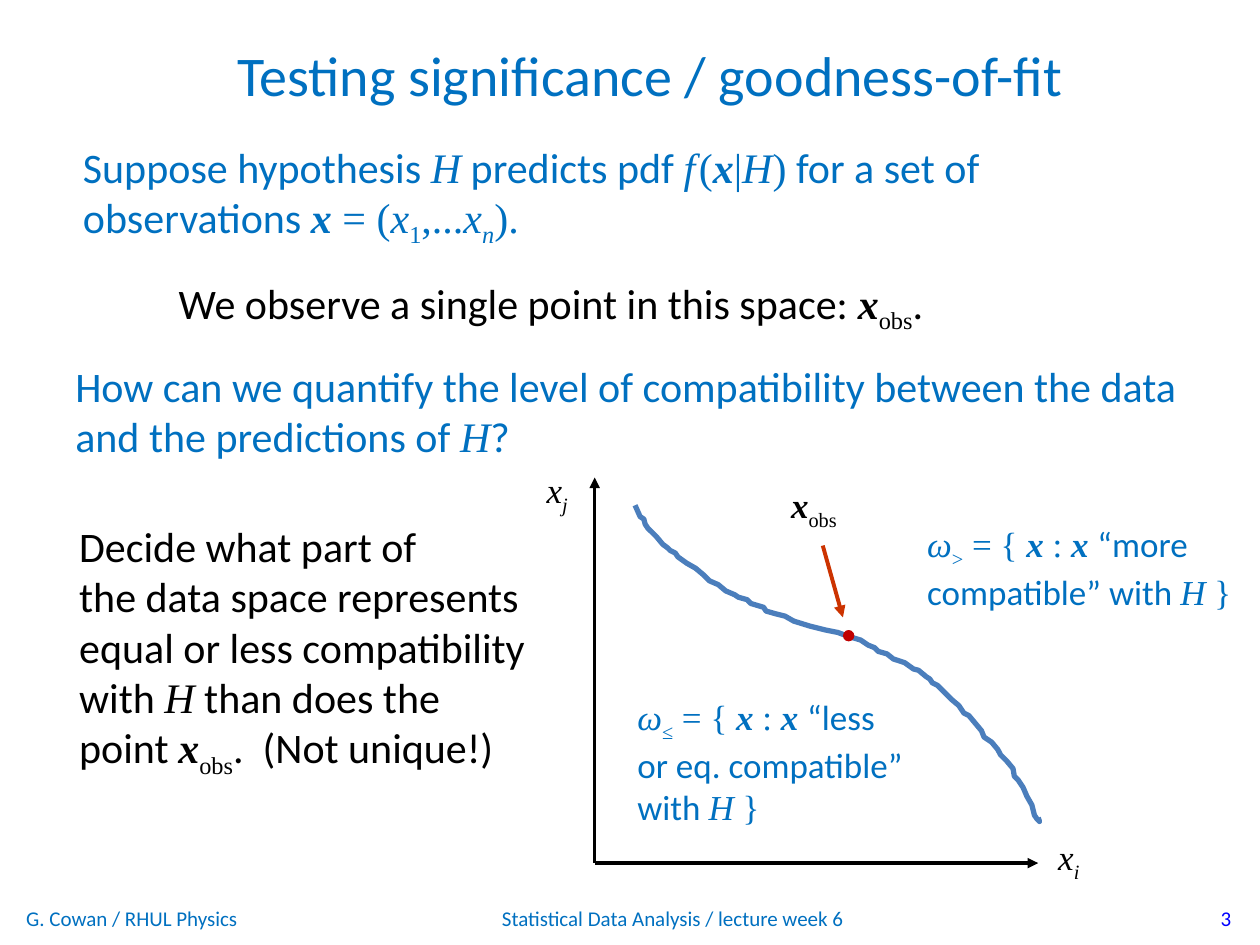
from pptx import Presentation
from pptx.dml.color import RGBColor
from pptx.enum.shapes import MSO_CONNECTOR, MSO_SHAPE
from pptx.enum.text import MSO_ANCHOR, PP_ALIGN
from pptx.oxml.ns import qn
from pptx.util import Inches, Pt
from lxml import etree

STRAIGHT = MSO_CONNECTOR.STRAIGHT
OVAL = MSO_SHAPE.OVAL
TOP, MIDDLE = MSO_ANCHOR.TOP, MSO_ANCHOR.MIDDLE
LEFT, CENTER, RIGHT = PP_ALIGN.LEFT, PP_ALIGN.CENTER, PP_ALIGN.RIGHT

COLORS = {"blue": "0070C0", "number": "0000FF", "black": "000000",
          "curve": "4B7EBC", "arrow": "CC3300", "point": "C00000"}
SANS, SERIF = "Calibri", "Times New Roman"
FORMATS = {
    "text": {"name": SANS},
    "math": {"name": SERIF},
    "variable": {"name": SERIF, "italic": True},
    "vector": {"name": SERIF, "italic": True, "bold": True},
    "sub": {"name": SERIF},
    "index": {"name": SERIF, "italic": True},
    "thin": {"name": SERIF, "size": Pt(8)},
}
SUBSCRIPTS = ("sub", "index")

H = ("H", "variable")
X = ("x", "vector")
X_OBS = [X, ("obs", "sub")]
CURVE = [
    (5.04, 4.01), (5.08, 4.1), (5.11, 4.12), (5.12, 4.16), (5.14, 4.19), (5.21, 4.26),
    (5.26, 4.32), (5.3, 4.35), (5.32, 4.37), (5.36, 4.39), (5.38, 4.42), (5.45, 4.47),
    (5.52, 4.51), (5.58, 4.56), (5.63, 4.61), (5.7, 4.64), (5.76, 4.69), (5.83, 4.72),
    (5.86, 4.74), (5.93, 4.76), (5.96, 4.79), (6.06, 4.82), (6.08, 4.85), (6.15, 4.87),
    (6.23, 4.89), (6.3, 4.93), (6.43, 4.97), (6.55, 5), (6.65, 5.02), (6.73, 5.05),
    (6.83, 5.08), (6.89, 5.12), (6.94, 5.14), (6.97, 5.17), (7.04, 5.19), (7.09, 5.23),
    (7.18, 5.26), (7.25, 5.31), (7.29, 5.32), (7.35, 5.37), (7.38, 5.39), (7.4, 5.42),
    (7.44, 5.44), (7.55, 5.55), (7.61, 5.6), (7.65, 5.66), (7.69, 5.68), (7.74, 5.74),
    (7.79, 5.8), (7.81, 5.85), (7.87, 5.89), (7.92, 5.95), (7.94, 5.99), (7.99, 6.04),
    (8.04, 6.1), (8.05, 6.16), (8.08, 6.19), (8.12, 6.25), (8.15, 6.32), (8.19, 6.39),
    (8.21, 6.47), (8.23, 6.5), (8.25, 6.52), (8.24, 6.49),
]


def color(name):
    """Return the palette colour of that name."""
    return RGBColor.from_string(COLORS[name])


def region(relation, first_words):
    """Return the first line of the definition of a region of data space."""
    return [("ω", "variable"), (relation, "sub"), (" = { ", "math"), X,
            (" : ", "math"), ("x ", "vector"), first_words]


class SlideBuilder:
    """Draws text, curves, arrows and dots on one slide."""

    def __init__(self, slide):
        """Keep the slide to draw on."""
        self.slide = slide

    def text(self, box, lines, size=24, ink="blue", align=LEFT, anchor=TOP, wrap=True):
        """Add a text box; a line is a list of strings or (string, format) pairs."""
        frame = self.slide.shapes.add_textbox(*map(Inches, box)).text_frame
        frame.word_wrap = wrap
        frame.vertical_anchor = anchor
        for number, line in enumerate(lines):
            paragraph = frame.add_paragraph() if number else frame.paragraphs[0]
            paragraph.alignment = align
            for piece in line:
                words, kind = (piece, "text") if isinstance(piece, str) else piece
                run = paragraph.add_run()
                run.text = words
                run.font.color.rgb = color(ink)
                for key, value in {"size": Pt(size), **FORMATS[kind]}.items():
                    setattr(run.font, key, value)
                if kind in SUBSCRIPTS:
                    run.font._element.set("baseline", "-25000")

    def arrow(self, start, end, ink="black", width=2):
        """Add a straight arrow with its head at the end."""
        connector = self.slide.shapes.add_connector(
            STRAIGHT, *map(Inches, (*start, *end)))
        connector.line.color.rgb = color(ink)
        connector.line.width = Pt(width)
        etree.SubElement(connector.line._get_or_add_ln(), qn("a:tailEnd"), type="triangle")
        etree.SubElement(connector._element.spPr, qn("a:effectLst"))

    def curve(self, points, ink, width):
        """Add an open outline through the points."""
        first, *others = [(Inches(x), Inches(y)) for x, y in points]
        builder = self.slide.shapes.build_freeform(*first)
        builder.add_line_segments(others, close=False)
        shape = builder.convert_to_shape()
        shape.shadow.inherit = False
        shape.fill.background()
        shape.line.color.rgb = color(ink)
        shape.line.width = Pt(width)

    def dot(self, box, ink):
        """Add a filled circle without outline."""
        shape = self.slide.shapes.add_shape(OVAL, *map(Inches, box))
        shape.shadow.inherit = False
        shape.fill.solid()
        shape.fill.fore_color.rgb = color(ink)
        shape.line.fill.background()


def main():
    """Build and save the slide."""
    presentation = Presentation()
    presentation.slide_width, presentation.slide_height = Inches(10), Inches(7.5)
    builder = SlideBuilder(presentation.slides.add_slide(presentation.slide_layouts[6]))

    for left, width, words, ink, align in [
        (7.54, 2.33, "3", "number", RIGHT),
        (0.11, 2.33, "G. Cowan / RHUL Physics", "blue", LEFT),
        (2.26, 6.16, "Statistical Data Analysis / lecture week 6", "blue", CENTER),
    ]:
        builder.text((left, 7.09, width, 0.4), [[words]], 12, ink, align, MIDDLE)

    builder.text((1.38, 0.27, 7.56, 0.47),
                 [["Testing significance / goodness-of-fit"]], 32, align=CENTER)
    builder.text((0.56, 1.07, 7.45, 0.91), [
        ["Suppose hypothesis ", H, " predicts pdf ", ("f", "variable"), (" ", "thin"),
         ("(", "math"), X, ("|", "math"), H, (")", "math"), " for a set of"],
        ["observations ", X, (" = (", "math"), ("x", "variable"), ("1", "sub"),
         (",...", "math"), ("x", "variable"), ("n", "index"), (").", "math")],
    ])
    builder.text((1.32, 2.15, 6.28, 0.5),
                 [["We observe a single point in this space: ", *X_OBS, "."]], ink="black")
    builder.text((0.5, 2.81, 9.27, 0.91), [
        ["How can we quantify the level of compatibility between the data "
         "and the predictions of ", H, "?"]])
    builder.text((0.53, 4.08, 3.82, 2.12), [
        ["Decide what part of"],
        ["the data space represents equal or less compatibility with ", H,
         " than does the point ", *X_OBS, ".  (Not unique!)"],
    ], ink="black")

    builder.curve(CURVE, "curve", 3)
    builder.text((4.96, 5.47, 2.88, 1.11), [
        region("≤", "“less"), ["or eq. compatible”"], ["with ", H, (" }", "math")]], 20)
    builder.text((7.26, 4.1, 2.71, 0.77), [
        region(">", "“more"), ["compatible” with ", H, (" }", "math")]], 20)
    builder.arrow((6.53, 4.33), (6.69, 4.9), "arrow", 2.25)
    for end in [(8.24, 6.85), (4.72, 3.79)]:
        builder.arrow((4.72, 6.85), end)
    builder.dot((6.69, 5, 0.09, 0.09), "point")
    for left, top, width, label in [
        (6.18, 3.79, 0.6, X_OBS),
        (8.3, 6.58, 0.38, [("x", "variable"), ("i", "index")]),
        (4.24, 3.67, 0.38, [("x", "variable"), ("j", "index")]),
    ]:
        builder.text((left, top, width, 0.44), [label], 20, "black", wrap=False)

    presentation.save("out.pptx")


if __name__ == "__main__":
    main()
